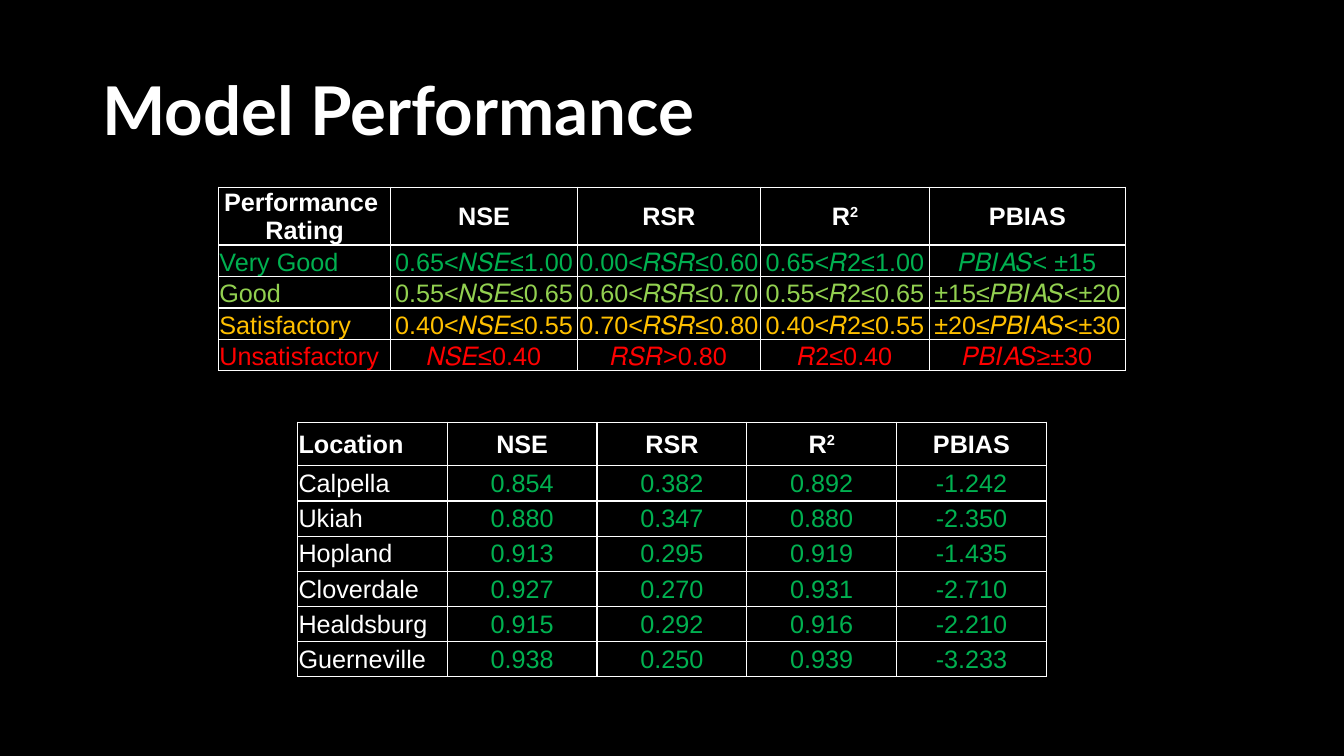
from lxml import etree
from pptx import Presentation
from pptx.dml.color import RGBColor
from pptx.enum.text import MSO_ANCHOR, PP_ALIGN
from pptx.oxml.ns import qn
from pptx.util import Pt

BLACK = RGBColor(0x00, 0x00, 0x00)
WHITE = RGBColor(0xFF, 0xFF, 0xFF)
GREEN = RGBColor(0x00, 0xB0, 0x50)
LIME = RGBColor(0x92, 0xD0, 0x50)
AMBER = RGBColor(0xFF, 0xC0, 0x00)
RED = RGBColor(0xFF, 0x00, 0x00)
LEFT, CENTER = PP_ALIGN.LEFT, PP_ALIGN.CENTER
MIDDLE, BOTTOM = MSO_ANCHOR.MIDDLE, MSO_ANCHOR.BOTTOM

METRICS = ["NSE", "RSR", "R^2", "PBIAS"]
RATINGS = [
    (GREEN, ["Very Good", "0.65<𝑁𝑆𝐸≤1.00", "0.00<𝑅𝑆𝑅≤0.60", "0.65<𝑅2≤1.00", "𝑃𝐵𝐼𝐴𝑆< ±15"]),
    (LIME, ["Good", "0.55<𝑁𝑆𝐸≤0.65", "0.60<𝑅𝑆𝑅≤0.70", "0.55<𝑅2≤0.65", "±15≤𝑃𝐵𝐼𝐴𝑆<±20"]),
    (AMBER, ["Satisfactory", "0.40<𝑁𝑆𝐸≤0.55", "0.70<𝑅𝑆𝑅≤0.80", "0.40<𝑅2≤0.55", "±20≤𝑃𝐵𝐼𝐴𝑆<±30"]),
    (RED, ["Unsatisfactory", "𝑁𝑆𝐸≤0.40", "𝑅𝑆𝑅>0.80", "𝑅2≤0.40", "𝑃𝐵𝐼𝐴𝑆≥±30"]),
]
LOCATIONS = [
    ["Calpella", "0.854", "0.382", "0.892", "-1.242"],
    ["Ukiah", "0.880", "0.347", "0.880", "-2.350"],
    ["Hopland", "0.913", "0.295", "0.919", "-1.435"],
    ["Cloverdale", "0.927", "0.270", "0.931", "-2.710"],
    ["Healdsburg", "0.915", "0.292", "0.916", "-2.210"],
    ["Guerneville", "0.938", "0.250", "0.939", "-3.233"],
]


def write_text(text_frame, text, size=18, font="Arial", color=WHITE, bold=False, align=CENTER):
    """Write one paragraph; a newline breaks the line and a caret starts a superscript."""
    paragraph = text_frame.paragraphs[0]
    paragraph.alignment = align
    for line_index, line in enumerate(text.split("\n")):
        if line_index:
            paragraph.add_line_break()
        for part_index, part in enumerate(line.split("^")):
            run = paragraph.add_run()
            run.text = part
            run.font.size = Pt(size)
            run.font.name = font
            run.font.bold = bold
            run.font.color.rgb = color
            if part_index:
                run.font._element.set("baseline", "30000")
    return paragraph


def add_borders(cell):
    """Draw a thin white line on each side of a cell."""
    properties = cell._tc.get_or_add_tcPr()
    for index, side in enumerate(("a:lnL", "a:lnR", "a:lnT", "a:lnB")):
        line = etree.Element(qn(side), w=str(Pt(1)))
        fill = etree.SubElement(line, qn("a:solidFill"))
        etree.SubElement(fill, qn("a:srgbClr"), val=str(WHITE))
        properties.insert(index, line)


def format_cell(cell, text, anchor=MIDDLE, **text_format):
    """Give a cell its text, margins, fill and borders."""
    cell.margin_left = cell.margin_right = cell.margin_top = Pt(0.75)
    cell.margin_bottom = Pt(0)
    cell.vertical_anchor = anchor
    cell.fill.background()
    add_borders(cell)
    write_text(cell.text_frame, text, **text_format)


def add_grid(slide, left, top, column_widths, row_heights):
    """Add an unstyled table with the given column widths and row heights."""
    frame = slide.shapes.add_table(
        len(row_heights), len(column_widths), Pt(left), Pt(top),
        Pt(sum(column_widths)), Pt(sum(row_heights)))
    table = frame.table
    table.first_row = table.horz_banding = False
    for column, width in zip(table.columns, column_widths):
        column.width = Pt(width)
    for row, height in zip(table.rows, row_heights):
        row.height = Pt(height)
    return table


def add_title(slide, left, top, width, height):
    """Place the slide title in its box."""
    title = slide.shapes.title
    title.left, title.top, title.width, title.height = Pt(left), Pt(top), Pt(width), Pt(height)
    title.text_frame.vertical_anchor = MIDDLE
    paragraph = write_text(title.text_frame, "Model Performance",
                           size=48, font="Lato", bold=True, align=LEFT)
    paragraph.line_spacing = 0.9


def add_location_table(slide, left, top, width):
    """Add the table of model scores by location."""
    table = add_grid(slide, left, top, [width / 5] * 5, [31.2] + [25.1] * len(LOCATIONS))
    for column, text in enumerate(["Location"] + METRICS):
        format_cell(table.cell(0, column), text, bold=True, align=CENTER if column else LEFT)
    for row, values in enumerate(LOCATIONS, 1):
        for column, text in enumerate(values):
            format_cell(table.cell(row, column), text, color=GREEN if column else WHITE,
                        align=CENTER if column else LEFT)


def add_rating_table(slide, left, top):
    """Add the table of score ranges for each performance rating."""
    table = add_grid(slide, left, top, [123.2, 133.2, 130.8, 120.8, 140],
                     [41.2] + [22.5] * len(RATINGS))
    for column, text in enumerate(["Performance \nRating"] + METRICS):
        format_cell(table.cell(0, column), text, bold=True)
    for row, (color, values) in enumerate(RATINGS, 1):
        for column, text in enumerate(values):
            format_cell(table.cell(row, column), text, anchor=BOTTOM, color=color,
                        align=CENTER if column else LEFT)


def main():
    """Build and save the presentation."""
    presentation = Presentation()
    presentation.slide_width, presentation.slide_height = Pt(960), Pt(540)
    slide = presentation.slides.add_slide(presentation.slide_layouts[5])
    slide.background.fill.solid()
    slide.background.fill.fore_color.rgb = BLACK
    add_title(slide, 66, 28.75, 828, 104.4)
    add_location_table(slide, 212.5, 301.6, 535)
    add_rating_table(slide, 156, 133.8)
    presentation.save("out.pptx")


if __name__ == "__main__":
    main()
